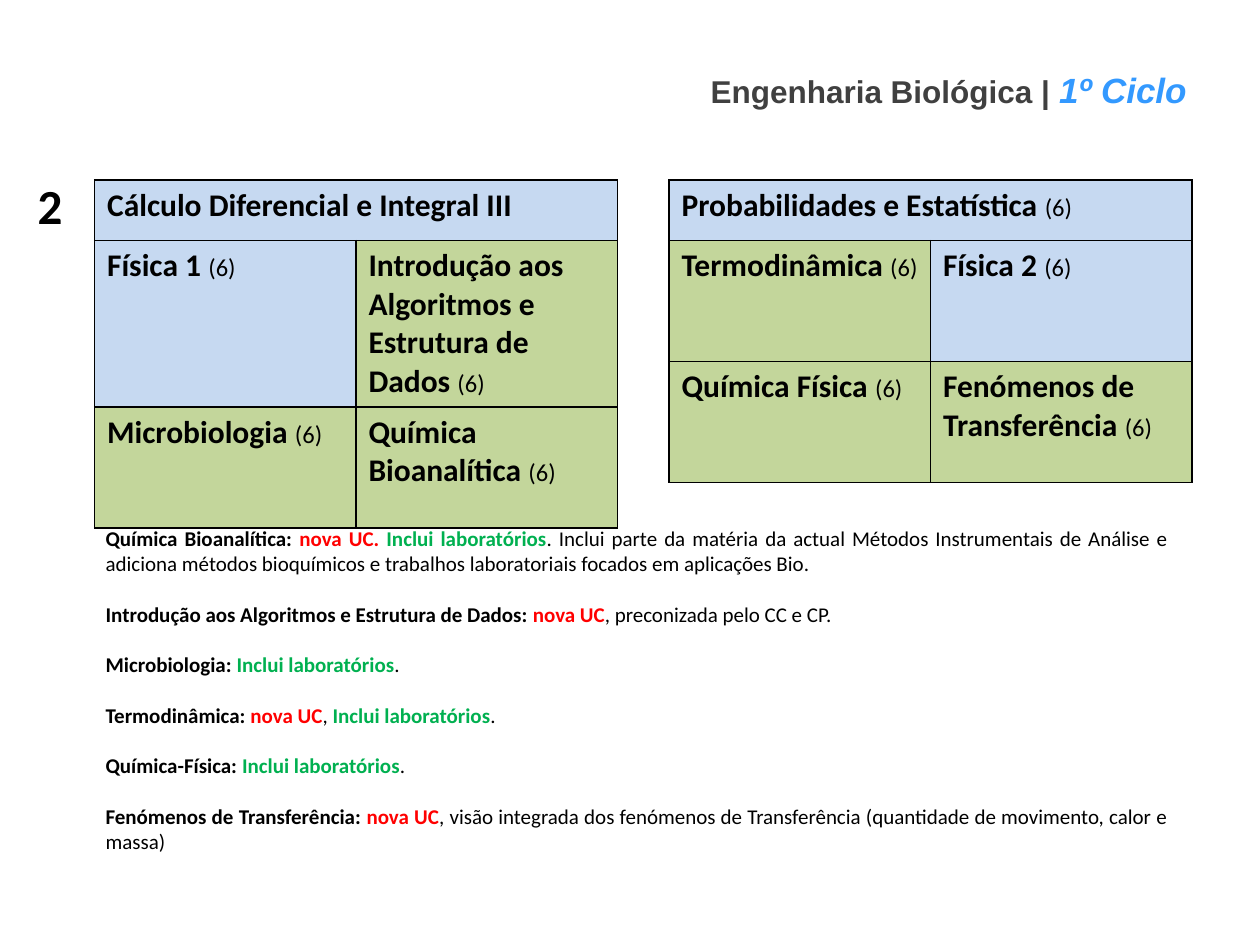
from pptx import Presentation
from pptx.dml.color import RGBColor
from pptx.enum.text import MSO_ANCHOR, PP_ALIGN
from pptx.oxml import parse_xml
from pptx.oxml.ns import nsdecls
from pptx.util import Inches, Pt

COLORS = {"black": "000000", "gray": "404040", "sky": "3399FF", "red": "FF0000",
          "green": "00B050", "basic": "C6D9F1", "core": "C3D69B"}
COL, ROW = 2.075, 0.48
TABLE_TOP = 1.43

NEW = ("nova UC", "red", True)
LABS = ("Inclui laboratórios", "green", True)

SEMESTERS = [
    (0.75, [[("Cálculo Diferencial e Integral III", "", "basic")],
            [("Física 1 ", "(6)", "basic"),
             ("Introdução aos Algoritmos e Estrutura de Dados ", "(6)", "core")],
            [("Microbiologia ", "(6)", "core"), ("Química Bioanalítica ", "(6)", "core")]]),
    (5.31, [[("Probabilidades e Estatística ", "(6)", "basic")],
            [("Termodinâmica ", "(6)", "core"), ("Física 2 ", "(6)", "basic")],
            [("Química Física ", "(6)", "core"), ("Fenómenos de Transferência ", "(6)", "core")]]),
]

NOTES = [
    ("Química Bioanalítica: ", [
        ("nova UC. ", "red", True), LABS,
        (". Inclui parte da matéria da actual Métodos Instrumentais de Análise e adiciona "
         "métodos bioquímicos e trabalhos laboratoriais focados em aplicações Bio.", "black", False)]),
    ("Introdução aos Algoritmos e Estrutura de Dados: ", [
        NEW, (", preconizada pelo CC e CP.", "black", False)]),
    ("Microbiologia: ", [LABS, (".", "black", False)]),
    ("Termodinâmica: ", [NEW, (", ", "black", False), LABS, (".", "black", False)]),
    ("Química-Física: ", [LABS, (".", "black", False)]),
    ("Fenómenos de Transferência: ", [
        NEW, (", visão integrada dos fenómenos de Transferência "
              "(quantidade de movimento, calor e massa)", "black", False)]),
]


def rgb(name):
    return RGBColor.from_string(COLORS[name])


def add_run(p, text, size, color="black", bold=True, italic=None):
    r = p.add_run()
    r.text = text
    r.font.size = Pt(size)
    r.font.bold = bold
    r.font.italic = italic
    r.font.color.rgb = rgb(color)


def add_text(s, x, y, w, h):
    tf = s.shapes.add_textbox(Inches(x), Inches(y), Inches(w), Inches(h)).text_frame
    tf.word_wrap = True
    return tf


def add_borders(cell):
    tcPr = cell._tc.get_or_add_tcPr()
    for i, side in enumerate(("lnL", "lnR", "lnT", "lnB")):
        tcPr.insert(i, parse_xml(
            f'<a:{side} {nsdecls("a")} w="12700"><a:solidFill>'
            f'<a:srgbClr val="{COLORS["black"]}"/></a:solidFill></a:{side}>'))


def fill_cell(cell, name, credits, kind):
    cell.fill.solid()
    cell.fill.fore_color.rgb = rgb(kind)
    p = cell.text_frame.paragraphs[0]
    p.font.name = "Calibri"
    add_run(p, name, 18)
    if credits:
        add_run(p, credits, 14, bold=False)


def add_semester(s, x, rows):
    table = s.shapes.add_table(3, 2, Inches(x), Inches(TABLE_TOP),
                               Inches(2 * COL), Inches(5 * ROW)).table
    for col in table.columns:
        col.width = Inches(COL)
    for row, units in zip(table.rows, (1, 2, 2)):
        row.height = Inches(units * ROW)
    table.cell(0, 0).merge(table.cell(0, 1))
    for i, courses in enumerate(rows):
        for j, course in enumerate(courses):
            fill_cell(table.cell(i, j), *course)
    for cell in table.iter_cells():
        add_borders(cell)


def add_title(s):
    tf = add_text(s, 5.06, 0.29, 4.94, 0.68)
    tf.vertical_anchor = MSO_ANCHOR.MIDDLE
    p = tf.paragraphs[0]
    p.alignment = PP_ALIGN.CENTER
    p.line_spacing = 1.5
    p.font.name = "Arial"
    add_run(p, "Engenharia Biológica | ", 18, "gray")
    add_run(p, "1º Ciclo", 20, "sky", italic=True)


def add_year(s):
    p = add_text(s, 0.2, 1.34, 0.4, 0.57).paragraphs[0]
    p.font.name = "Calibri"
    add_run(p, "2", 28)


def add_notes(s):
    tf = add_text(s, 0.74, 4.12, 8.63, 2.73)
    for i, (course, parts) in enumerate(NOTES):
        p = tf.add_paragraph() if i else tf.paragraphs[0]
        p.alignment = PP_ALIGN.JUSTIFY
        p.font.name = "Calibri"
        p.space_before = Pt(14.5 if i else 0)
        add_run(p, course, 12)
        for text, color, bold in parts:
            add_run(p, text, 12, color, bold)


def main():
    prs = Presentation()
    prs.slide_width, prs.slide_height = Inches(10), Inches(7.5)
    s = prs.slides.add_slide(prs.slide_layouts[6])
    for x, rows in SEMESTERS:
        add_semester(s, x, rows)
    add_year(s)
    add_notes(s)
    add_title(s)
    prs.save("out.pptx")


if __name__ == "__main__":
    main()
